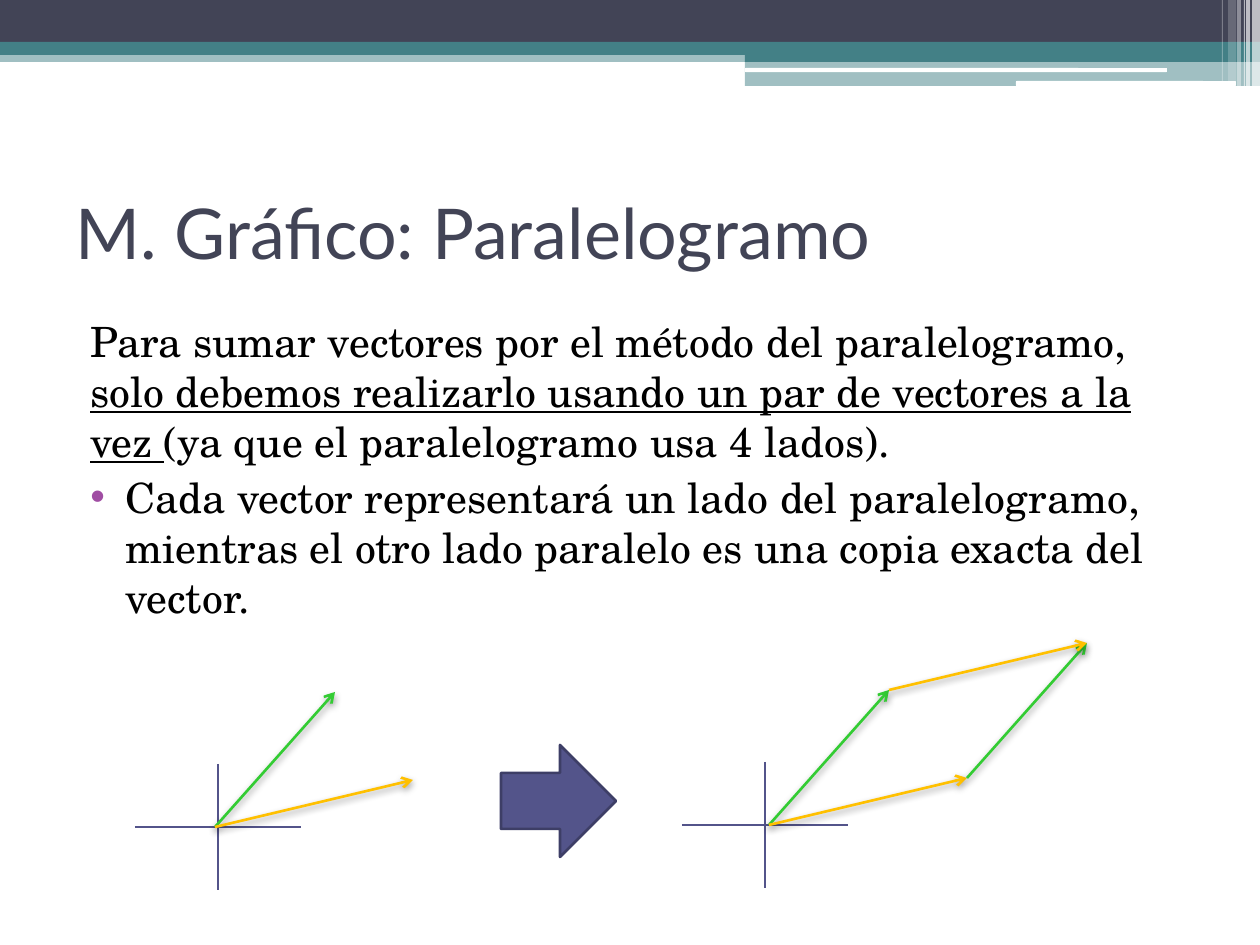
from lxml.etree import SubElement
from pptx import Presentation
from pptx.dml.color import RGBColor
from pptx.enum.shapes import MSO_CONNECTOR, MSO_SHAPE
from pptx.enum.text import MSO_ANCHOR, PP_ALIGN
from pptx.oxml.ns import qn
from pptx.util import Emu, Pt

THEME = {
    "dark": "424456", "teal": "438086", "white": "FFFFFF", "black": "000000",
    "indigo": "53548A", "indigo_dark": "3D3E66", "bullet": "A04DA3",
    "green": "33CC33", "amber": "FFC000",
    "title_font": "Lato", "body_font": "TeX Gyre Schola",
    "title_size": 40, "body_size": 23.8,
}

TITLE = "M. Gráfico: Paralelogramo"
BODY = [  # bullet?, [(text, underlined?)]
    (False, [("Para sumar vectores por el método del paralelogramo, ", False),
             ("solo debemos realizarlo usando un par de vectores a la vez ", True),
             ("(ya que el paralelogramo usa 4 lados).", False)]),
    (True, [("Cada vector representará un lado del paralelogramo, mientras el "
             "otro lado paralelo es una copia exacta del vector.", False)]),
]

# Header: left, top, width, height, colour, opacity in percent
BANDS = [
    (0, 50, 1260, 12, "teal", 50),
    (0, 0, 1260, 42, "dark", 100),
    (0, 42, 1260, 13, "teal", 100),
    (745, 49, 515, 13, "teal", 100),
    (745, 61, 515, 25, "teal", 50),
]
RULES = [(745, 68, 422, 4), (1016, 81, 220, 5)]
STRIPES = [  # left, width, height, opacity
    (1252, 8, 86, 65), (1246, 4, 86, 65), (1244, 1, 86, 60),
    (1237, 4, 86, 40), (1228, 8, 81, 20), (1222, 1, 81, 30),
]

# Vector diagrams: crossing of the axes, offset of the vectors, full figure?
AXIS_X, AXIS_Y = 83, 63
U, V = (120, -135), (198, -47)
DIAGRAMS = [((218, 827), -3, False), ((765, 825), 4, True)]
BIG_ARROW = (501, 745, 115, 112)


def px(n):
    return Emu(round(n * 914400 / 126))


def rgb(name):
    return RGBColor.from_string(THEME[name])


def add_block(shapes, kind, box, color, opacity=100, line=None):
    s = shapes.add_shape(kind, *map(px, box))
    s.shadow.inherit = False
    s.fill.solid()
    s.fill.fore_color.rgb = rgb(color)
    if opacity < 100:
        clr = s.fill._xPr.find(qn("a:solidFill"))[0]
        SubElement(clr, qn("a:alpha"), val=str(opacity * 1000))
    if line:
        s.line.color.rgb = rgb(line)
        s.line.width = Pt(1.5)
    else:
        s.line.fill.background()
    return s


def add_line(shapes, start, end, color, vector=False):
    c = shapes.add_connector(MSO_CONNECTOR.STRAIGHT, *map(px, (*start, *end)))
    c.line.color.rgb = rgb(color)
    c.line.width = Pt(1.5 if vector else 0.75)
    pr = c._element.spPr
    if vector:
        SubElement(pr.find(qn("a:ln")), qn("a:tailEnd"), type="arrow")
    effects = SubElement(pr, qn("a:effectLst"))
    if vector:
        shadow = SubElement(effects, qn("a:outerShdw"), blurRad=str(Pt(4.1)),
                            dist=str(Pt(2)), dir="5400000", rotWithShape="0")
        clr = SubElement(shadow, qn("a:srgbClr"), val=THEME["black"])
        SubElement(clr, qn("a:alpha"), val="40000")


def add_run(p, text, *, font, size, color, underline=False):
    r = p.add_run()
    r.text = text
    r.font.name, r.font.size = THEME[font], Pt(THEME[size])
    r.font.color.rgb = rgb(color)
    if underline:
        r.font.underline = True


def set_indent(p, margin, indent, bullet=False):
    pPr = p._p.get_or_add_pPr()
    pPr.set("marL", str(px(margin)))
    pPr.set("indent", str(px(indent)))
    if bullet:
        clr = SubElement(pPr, qn("a:buClr"))
        SubElement(clr, qn("a:srgbClr"), val=THEME["bullet"])
        SubElement(pPr, qn("a:buFont"), typeface="Arial")
        SubElement(pPr, qn("a:buChar"), char="•")


def add_diagram(shapes, center, offset, full):
    x, y = center
    g = shapes.add_group_shape().shapes
    add_line(g, (x, y - AXIS_Y), (x, y + AXIS_Y), "indigo")
    add_line(g, (x - AXIS_X, y), (x + AXIS_X, y), "indigo")

    def point(*vectors):
        return (x + offset + sum(v[0] for v in vectors),
                y + sum(v[1] for v in vectors))

    sides = [((), U, "green"), ((), V, "amber")]
    if full:
        sides += [((V,), U, "green"), ((U,), V, "amber")]
    for base, vector, color in sides:
        add_line(g, point(*base), point(*base, vector), color, vector=True)


prs = Presentation()
prs.slide_width, prs.slide_height = px(1260), px(945)
slide = prs.slides.add_slide(prs.slide_layouts[5])
shapes = slide.shapes

# Header decoration
for *box, color, opacity in BANDS:
    add_block(shapes, MSO_SHAPE.RECTANGLE, box, color, opacity)
for box in RULES:
    add_block(shapes, MSO_SHAPE.ROUNDED_RECTANGLE, box, "white")
for left, width, height, opacity in STRIPES:
    add_block(shapes, MSO_SHAPE.RECTANGLE, (left, 0, width, height), "white", opacity)

# Title
title = shapes.title
title.left, title.top, title.width, title.height = map(px, (63, 158, 1134, 147))
title.text_frame.vertical_anchor = MSO_ANCHOR.MIDDLE
p = title.text_frame.paragraphs[0]
p.alignment = PP_ALIGN.LEFT
add_run(p, TITLE, font="title_font", size="title_size", color="dark")

# Body text
tf = shapes.add_textbox(*map(px, (63, 310, 1134, 262))).text_frame
tf.word_wrap = True
for i, (bullet, runs) in enumerate(BODY):
    p = tf.add_paragraph() if i else tf.paragraphs[0]
    p.space_before = Pt(3)
    set_indent(p, *((50, -35, True) if bullet else (15, 0)))
    for text, underline in runs:
        add_run(p, text, font="body_font", size="body_size", color="black",
                underline=underline)

# Two vectors, then the parallelogram they form
for diagram in DIAGRAMS:
    add_diagram(shapes, *diagram)
add_block(shapes, MSO_SHAPE.RIGHT_ARROW, BIG_ARROW, "indigo", line="indigo_dark")

prs.save("out.pptx")
